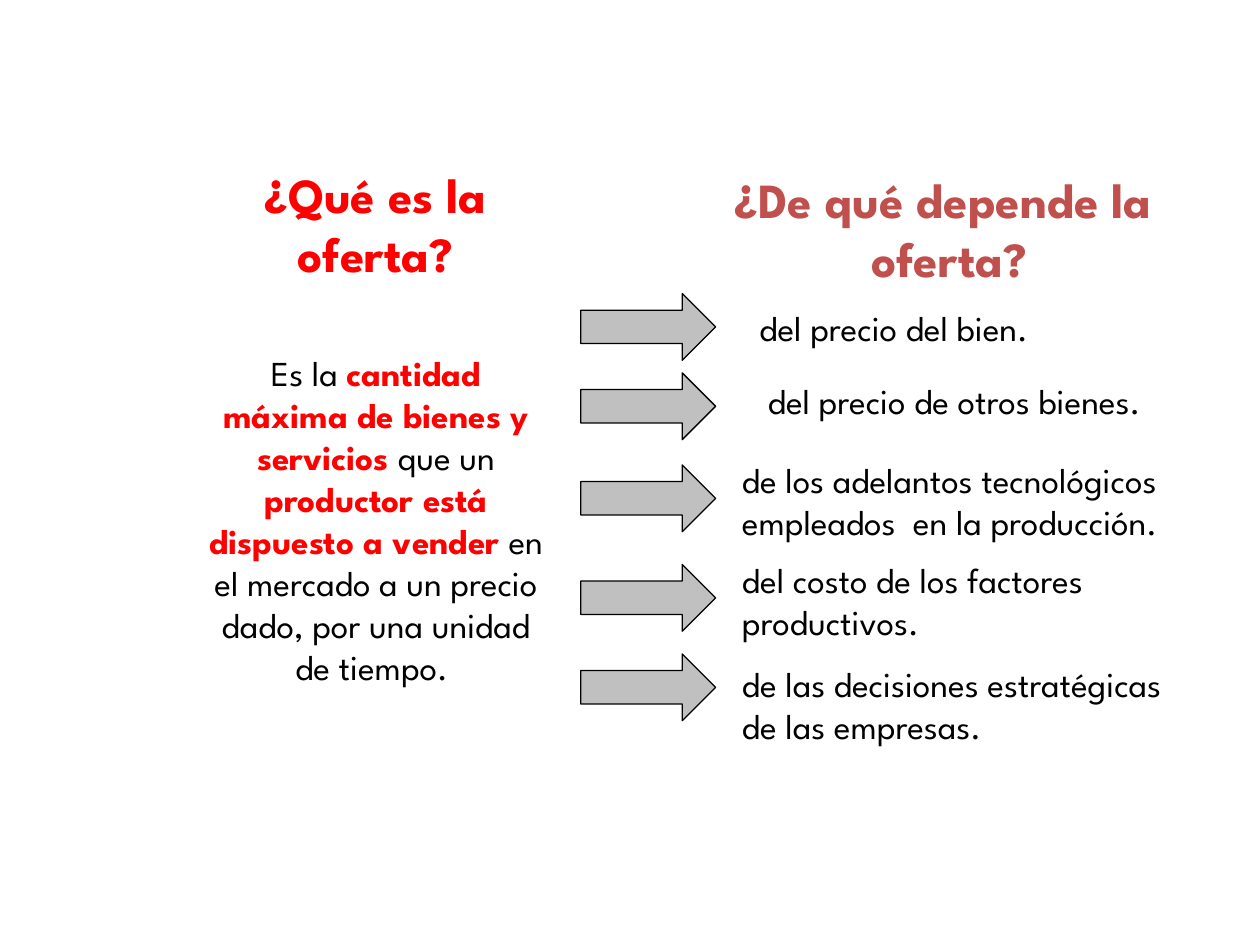
from pptx import Presentation
from pptx.dml.color import RGBColor
from pptx.enum.shapes import MSO_SHAPE
from pptx.enum.text import MSO_ANCHOR, MSO_AUTO_SIZE, PP_ALIGN
from pptx.util import Inches, Pt

FONT = "League Spartan"
BLACK, RED, BRICK, GRAY = "000000", "FF0000", "C0504D", "C0C0C0"
LEFT, CENTER = PP_ALIGN.LEFT, PP_ALIGN.CENTER
TOP, MIDDLE = MSO_ANCHOR.TOP, MSO_ANCHOR.MIDDLE

presentation = Presentation()
presentation.slide_width, presentation.slide_height = Inches(10), Inches(7.5)
slide = presentation.slides.add_slide(presentation.slide_layouts[6])

# Grid of 100 columns by 75 rows
COLUMN = presentation.slide_width / 100
ROW = presentation.slide_height / 75


def color(hex_string):
    return RGBColor.from_string(hex_string)


def add_text(column, row, columns, rows, paragraphs, size,
             alignment=CENTER, anchor=TOP, wrap=False):
    """Each paragraph is a list of (text, colour, bold) runs."""
    box = slide.shapes.add_textbox(int(column * COLUMN), int(row * ROW),
                                   int(columns * COLUMN), int(rows * ROW))
    frame = box.text_frame
    frame.word_wrap = wrap
    frame.auto_size = MSO_AUTO_SIZE.SHAPE_TO_FIT_TEXT
    frame.vertical_anchor = anchor
    for index, runs in enumerate(paragraphs):
        paragraph = frame.add_paragraph() if index else frame.paragraphs[0]
        paragraph.alignment = alignment
        for text, run_color, bold in runs:
            run = paragraph.add_run()
            run.text = text
            run.font.name = FONT
            run.font.size = Pt(size)
            run.font.bold = bold
            run.font.color.rgb = color(run_color)


# Headings
headings = [
    (18.7, 12.6, 22.2, RED, ["¿Qué es la", "oferta?"]),
    (54.3, 13, 42.1, BRICK, ["¿De qué depende la ", "oferta?"]),
]
for column, row, columns, heading_color, lines in headings:
    add_text(column, row, columns, 10.3,
             [[(line, heading_color, True)] for line in lines], 28)

# Definition of supply
definition = [
    ("Es la ", BLACK, False),
    ("cantidad máxima de bienes y servicios", RED, True),
    (" que un ", BLACK, False),
    ("productor está dispuesto a vender", RED, True),
    (" en el mercado a un precio dado, por una unidad de tiempo. ", BLACK, False),
]
add_text(15.3, 25.7, 29.1, 31, [definition], 20, anchor=MIDDLE, wrap=True)

# Factors: arrow row, then text column, row, width, alignment, anchor, lines
factors = [
    (23.3, 56.8, 23.8, 28.3, CENTER, TOP, ["del precio del bien."]),
    (29.6, 56.8, 29.6, 37.9, CENTER, TOP, ["del precio de otros bienes."]),
    (36.9, 57.9, 35.9, 43.4, LEFT, TOP,
     ["de los adelantos tecnológicos", "empleados  en la producción."]),
    (44.8, 57.9, 43.8, 35.8, LEFT, TOP,
     ["del costo de los factores", "productivos."]),
    (51.9, 57.9, 52.1, 42.9, LEFT, MIDDLE,
     ["de las decisiones estratégicas", "de las empresas."]),
]
for arrow_row, column, row, columns, alignment, anchor, lines in factors:
    add_text(column, row, columns, 0.9 + 3.4 * len(lines),
             [[(line, BLACK, False)] for line in lines], 20, alignment, anchor)

    arrow = slide.shapes.add_shape(
        MSO_SHAPE.RIGHT_ARROW, int(46.1 * COLUMN), int(arrow_row * ROW),
        int(10.7 * COLUMN), int(5.3 * ROW))
    arrow.shadow.inherit = False
    arrow.fill.solid()
    arrow.fill.fore_color.rgb = color(GRAY)
    arrow.line.color.rgb = color(BLACK)
    arrow.line.width = Pt(0.75)

presentation.save("out.pptx")
